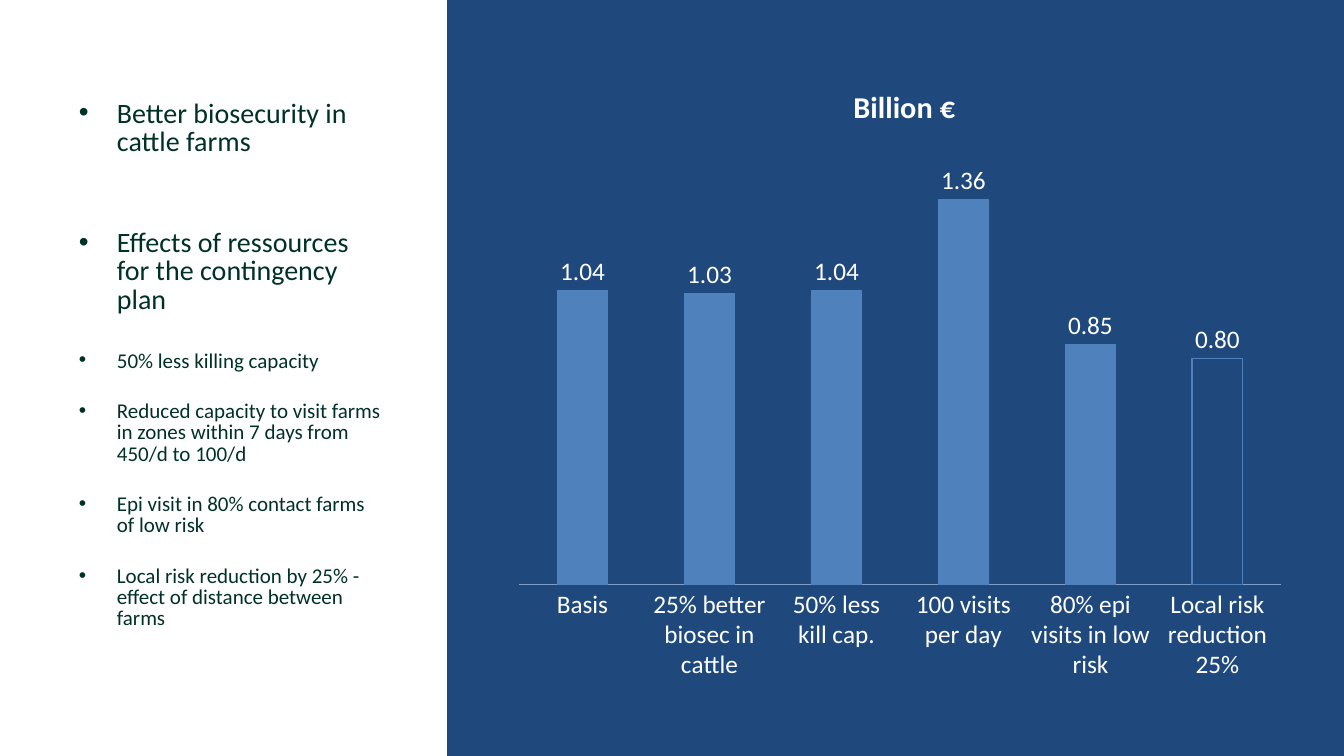
from lxml import etree
from pptx import Presentation
from pptx.chart.data import CategoryChartData
from pptx.dml.color import RGBColor
from pptx.enum.chart import XL_CHART_TYPE, XL_LABEL_POSITION, XL_TICK_MARK
from pptx.enum.shapes import MSO_SHAPE
from pptx.oxml.ns import qn
from pptx.util import Emu, Pt

COLUMNS = XL_CHART_TYPE.COLUMN_CLUSTERED
OUTSIDE_END = XL_LABEL_POSITION.OUTSIDE_END
NO_TICK = XL_TICK_MARK.NONE
RECTANGLE = MSO_SHAPE.RECTANGLE

WIDTH, HEIGHT = 1344, 756
EMU_PER_PX = 12192000 / WIDTH
FONT = "Calibri"
NAVY = RGBColor(0x1F, 0x49, 0x7D)
BLUE = RGBColor(0x4F, 0x81, 0xBD)
AXIS_BLUE = RGBColor(0x7F, 0x9D, 0xC5)
GREEN = RGBColor(0x00, 0x31, 0x27)
WHITE = RGBColor(0xFF, 0xFF, 0xFF)

CHART_AREA = (503, 52, 793, 642)
PLOT_AREA = (519, 132, 762, 453)
TITLE_AT = (848, 80)

BULLETS = [
    ("Better biosecurity in cattle farms", 20, 0),
    ("Effects of ressources for the contingency plan", 20, 52),
    ("50% less killing capacity", 15, 26),
    ("Reduced capacity to visit farms in zones within 7 days "
     "from 450/d to 100/d", 15, 21),
    ("Epi visit in 80% contact farms of low risk", 15, 21),
    ("Local risk reduction by 25% - effect of distance between farms", 15, 21),
]
COSTS = {
    "Basis": 1.04,
    "25% better biosec in cattle": 1.03,
    "50% less kill cap.": 1.04,
    "100 visits per day": 1.36,
    "80% epi visits in low risk": 0.85,
    "Local risk reduction 25%": 0.8,
}


def px(length):
    """Turn pixels into EMU."""
    return Emu(round(length * EMU_PER_PX))


def set_font(font, size, color, bold=False):
    """Give a font its face, size, weight and colour."""
    font.name = FONT
    font.size = Pt(size)
    font.bold = bold
    font.color.rgb = color


def add_panel(page, left, top, width, height, color):
    """Add a plain filled rectangle."""
    panel = page.shapes.add_shape(RECTANGLE, *map(px, (left, top, width, height)))
    panel.shadow.inherit = False
    panel.fill.solid()
    panel.fill.fore_color.rgb = color
    panel.line.fill.background()


def add_bullet(para, text, size, space_before):
    """Fill a paragraph with one hanging bullet item."""
    properties = para._p.get_or_add_pPr()
    properties.set("marL", str(px(38)))
    properties.set("indent", str(-px(38)))
    etree.SubElement(properties, qn("a:buFont"), typeface="Arial")
    etree.SubElement(properties, qn("a:buChar"), char="•")
    para.line_spacing = 0.84
    para.space_before = Pt(space_before)
    span = para.add_run()
    span.text = text
    set_font(span.font, size, GREEN)


def add_bullet_list(page, left, top, width, height, items):
    """Add a text box holding the bullet items."""
    box = page.shapes.add_textbox(*map(px, (left, top, width, height)))
    frame = box.text_frame
    frame.word_wrap = True
    for number, item in enumerate(items):
        para = frame.add_paragraph() if number else frame.paragraphs[0]
        add_bullet(para, *item)


def place_in_chart(element, index, fractions, inner=False):
    """Fix the place of a chart part by fractions of the chart area."""
    for old in element.findall(qn("c:layout")):
        element.remove(old)
    layout = etree.Element(qn("c:layout"))
    element.insert(index, layout)
    manual = etree.SubElement(layout, qn("c:manualLayout"))
    settings = [("layoutTarget", "inner")] if inner else []
    settings += [("xMode", "edge"), ("yMode", "edge")]
    settings += zip("xywh", fractions)
    for name, value in settings:
        etree.SubElement(manual, qn("c:" + name), val=str(value))


def chart_fractions(left, top, *size):
    """Express a place on the slide as fractions of the chart area."""
    chart_left, chart_top, *chart_size = CHART_AREA
    place = (left - chart_left, top - chart_top, *size)
    return [part / whole for part, whole in zip(place, chart_size * 2)]


def style_title(chart, text):
    """Write and place the chart title."""
    chart.has_title = True
    title = chart.chart_title
    span = title.text_frame.paragraphs[0].add_run()
    span.text = text
    set_font(span.font, 21.6, WHITE, bold=True)
    place_in_chart(title._element, 1, chart_fractions(*TITLE_AT))


def style_axes(chart):
    """Show only the category axis, with no ticks."""
    categories, values = chart.category_axis, chart.value_axis
    categories.major_tick_mark = NO_TICK
    categories.minor_tick_mark = NO_TICK
    categories.format.line.color.rgb = AXIS_BLUE
    categories.format.line.width = Pt(0.75)
    values.has_major_gridlines = False
    values.minimum_scale = 0
    values.maximum_scale = 1.6
    values.visible = False


def style_bars(plot):
    """Colour the bars and label them with their values."""
    plot.vary_by_categories = False
    plot.gap_width = 150
    plot.overlap = -25
    series = plot.series[0]
    last_bar = series.points[len(COSTS) - 1]
    for part, color in ((series, BLUE), (last_bar, NAVY)):
        part.format.fill.solid()
        part.format.fill.fore_color.rgb = color
        part.format.line.color.rgb = BLUE
        part.format.line.width = Pt(0.75)
    labels = series.data_labels
    labels.show_value = True
    labels.number_format = "0.00"
    labels.number_format_is_linked = False
    labels.position = OUTSIDE_END
    set_font(labels.font, 18, WHITE)


def add_cost_chart(page):
    """Add the column chart of costs."""
    data = CategoryChartData(number_format="0.00")
    data.categories = list(COSTS)
    data.add_series("Series 1", list(COSTS.values()))
    chart = page.shapes.add_chart(COLUMNS, *map(px, CHART_AREA), data).chart
    chart.has_legend = False
    set_font(chart.font, 18, WHITE)
    style_title(chart, "Billion €")
    style_axes(chart)
    style_bars(chart.plots[0])
    plot_area = chart._chartSpace.chart.plotArea
    place_in_chart(plot_area, 0, chart_fractions(*PLOT_AREA), inner=True)


def main():
    """Build and save the slide."""
    deck = Presentation()
    deck.slide_width, deck.slide_height = px(WIDTH), px(HEIGHT)
    page = deck.slides.add_slide(deck.slide_layouts[6])
    add_panel(page, 447, 0, WIDTH - 447, HEIGHT, NAVY)
    add_bullet_list(page, 69, 96, 322, 578, BULLETS)
    add_cost_chart(page)
    deck.save("out.pptx")


if __name__ == "__main__":
    main()
